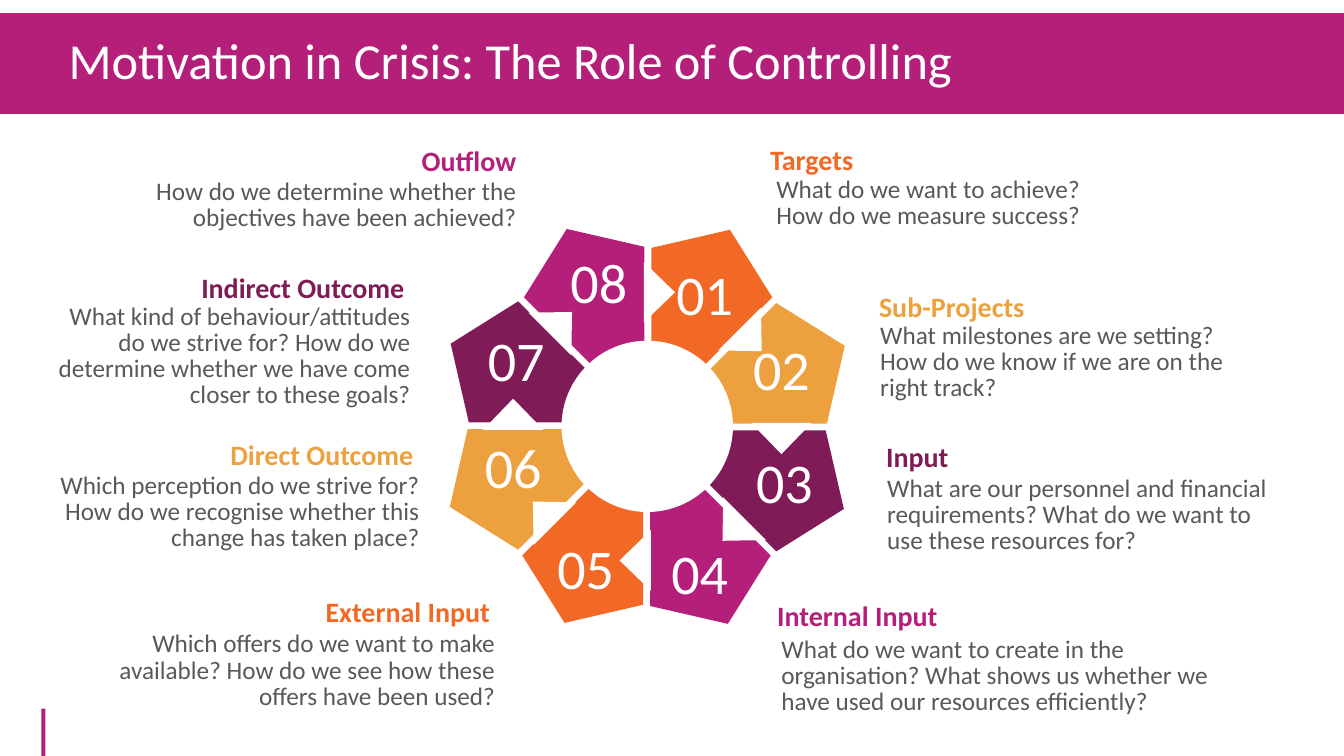
import math
from dataclasses import dataclass

import pptx
import pptx.dml.color
import pptx.enum.shapes
import pptx.enum.text
import pptx.util

Inches = pptx.util.Inches
Pt = pptx.util.Pt
ALIGN = pptx.enum.text.PP_ALIGN
ANCHOR = pptx.enum.text.MSO_ANCHOR
FIT = pptx.enum.text.MSO_AUTO_SIZE
SHAPE = pptx.enum.shapes.MSO_SHAPE


@dataclass(frozen=True)
class Theme:
    font: str = "Calibri"
    white: str = "FFFFFF"
    grey: str = "595959"
    magenta: str = "B41F7A"
    cycle: tuple = ("F16924", "EDA13E", "7F1C58", "B41F7A")
    title_size: int = 36
    number_size: int = 40
    heading_size: int = 20
    body_size: int = 18


@dataclass(frozen=True)
class Box:
    left: float
    top: float
    width: float
    height: float

    def lengths(self):
        return [Inches(value) for value in (self.left, self.top, self.width, self.height)]


@dataclass(frozen=True)
class Stage:
    heading: str
    heading_width: float
    heading_shift: tuple  # from the aligned top corner of the body box
    body: Box
    text: str
    number_offset: tuple  # from the ring centre


THEME = Theme()

# Stages 01 to 08, clockwise from the top
STAGES = [
    Stage("Targets", 1.03, (-0.12, -0.38), Box(7.66, 1.74, 3.41, 0.57),
          "What do we want to achieve? How do we measure success?", (0.57, -1.28)),
    Stage("Sub-Projects", 1.66, (-0.07, -0.38), Box(8.69, 3.19, 3.75, 0.84),
          "What milestones are we setting? How do we know if we are on the right track?",
          (1.33, -0.53)),
    Stage("Input", 0.83, (-0.07, -0.41), Box(8.76, 4.71, 3.93, 0.84),
          "What are our personnel and financial requirements? "
          "What do we want to use these resources for?", (1.36, 0.59)),
    Stage("Internal Input", 1.81, (-0.1, -0.42), Box(7.71, 6.3, 4.58, 0.84),
          "What do we want to create in the organisation? "
          "What shows us whether we have used our resources efficiently?", (0.52, 1.49)),
    Stage("External Input", 1.85, (0.01, -0.41), Box(1.09, 6.25, 3.86, 0.84),
          "Which offers do we want to make available? "
          "How do we see how these offers have been used?", (-0.61, 1.44)),
    Stage("Direct Outcome", 2.03, (0, -0.4), Box(0.06, 4.68, 4.14, 0.84),
          "Which perception do we strive for?\n"
          "How do we recognise whether this change has taken place?", (-1.33, 0.44)),
    Stage("Indirect Outcome", 2.23, (0, -0.37), Box(0.34, 3, 3.77, 1.1),
          "What kind of behaviour/attitudes do we strive for? "
          "How do we determine whether we have come closer to these goals?", (-1.3, -0.62)),
    Stage("Outflow", 1.16, (0.06, -0.39), Box(1.09, 1.76, 4.07, 0.57),
          "How do we determine whether the objectives have been achieved?", (-0.48, -1.4)),
]

# First segment and its notch, measured from the ring centre
SEGMENT = [(0.04, -1.77), (0.82, -1.95), (1.24, -1.28), (0.58, -0.62), (0.04, -0.84)]
NOTCH_CENTRE = (0.12, -1.33)
NOTCH_SIZE = (0.6, 0.31)
HUB_DIAMETER = 1.7
NUMBER_SIZE = (0.86, 0.7)


def set_values(target, values):
    for name, value in values.items():
        setattr(target, name, value)


def paint(shape, colour):
    shape.shadow.inherit = False
    shape.fill.solid()
    shape.fill.fore_color.rgb = pptx.dml.color.RGBColor.from_string(colour)
    shape.line.fill.background()


def add_filled(slide, kind, box, colour):
    shape = slide.shapes.add_shape(kind, *box.lengths())
    paint(shape, colour)
    return shape


def write(shape, text, size, colour, frame=None, paragraph_values=None, bold=False):
    shape.text_frame.text = text
    set_values(shape.text_frame, {"word_wrap": True, **(frame or {})})
    for paragraph in shape.text_frame.paragraphs:
        set_values(paragraph, {"space_before": Pt(0), **(paragraph_values or {})})
        set_values(paragraph.font, {"name": THEME.font, "size": Pt(size), "bold": bold})
        paragraph.font.color.rgb = pptx.dml.color.RGBColor.from_string(colour)


def rotate(point, degrees):
    x, y = point
    angle = math.radians(degrees)
    return (x * math.cos(angle) - y * math.sin(angle),
            x * math.sin(angle) + y * math.cos(angle))


def centred_box(centre, offset, size):
    return Box(centre[0] + offset[0] - size[0] / 2,
               centre[1] + offset[1] - size[1] / 2, *size)


def draw_title(slide, box):
    bar = add_filled(slide, SHAPE.RECTANGLE, box, THEME.magenta)
    title = slide.shapes.title
    bar.element.addnext(title.element)  # title in front of its bar
    place = Box(box.left + 0.58, box.top + 0.19, box.width - 1.22, 0.64)
    set_values(title, dict(zip(("left", "top", "width", "height"), place.lengths())))
    write(title, "Motivation in Crisis: The Role of Controlling",
          THEME.title_size, THEME.white,
          {"vertical_anchor": ANCHOR.MIDDLE, "auto_size": FIT.NONE},
          {"alignment": ALIGN.LEFT, "line_spacing": 0.8})


def draw_ring(slide, box):
    centre = (box.left + box.width / 2, box.top + box.height / 2)
    step = 360 / len(STAGES)

    # Segments
    for index in range(len(STAGES)):
        corners = [rotate(corner, index * step) for corner in SEGMENT]
        points = [(Inches(centre[0] + x), Inches(centre[1] + y)) for x, y in corners]
        builder = slide.shapes.build_freeform(*points[0])
        builder.add_line_segments(points[1:], close=True)
        paint(builder.convert_to_shape(), THEME.cycle[index % len(THEME.cycle)])

    # Hub
    hub = centred_box(centre, (0, 0), (HUB_DIAMETER, HUB_DIAMETER))
    add_filled(slide, SHAPE.OVAL, hub, THEME.white)

    # Notches
    for index in range(len(STAGES)):
        offset = rotate(NOTCH_CENTRE, index * step)
        notch = add_filled(slide, SHAPE.ISOSCELES_TRIANGLE,
                           centred_box(centre, offset, NOTCH_SIZE), THEME.white)
        notch.rotation = (90 + index * step) % 360

    # Numbers
    for number, stage in enumerate(STAGES, 1):
        place = centred_box(centre, stage.number_offset, NUMBER_SIZE)
        label = slide.shapes.add_textbox(*place.lengths())
        write(label, f"{number:02}", THEME.number_size, THEME.white,
              paragraph_values={"alignment": ALIGN.CENTER, "line_spacing": 0.9})


def draw_stage(slide, stage, box, colour, on_left):
    alignment = ALIGN.RIGHT if on_left else ALIGN.LEFT
    shift_x, shift_y = stage.heading_shift
    left = box.left + shift_x + (box.width - stage.heading_width if on_left else 0)
    place = Box(left, box.top + shift_y, stage.heading_width, 0.44)
    heading = slide.shapes.add_textbox(*place.lengths())
    write(heading, stage.heading, THEME.heading_size, colour,
          {"word_wrap": False, "vertical_anchor": ANCHOR.BOTTOM,
           "auto_size": FIT.SHAPE_TO_FIT_TEXT},
          {"alignment": alignment}, bold=True)
    body = slide.shapes.add_textbox(*box.lengths())
    write(body, stage.text, THEME.body_size, THEME.grey,
          {"margin_left": Inches(0.04), "margin_right": Inches(0.04),
           "margin_top": Inches(0.02), "margin_bottom": Inches(0.02),
           "auto_size": FIT.SHAPE_TO_FIT_TEXT},
          {"alignment": alignment, "line_spacing": Pt(18.6)})


def main():
    presentation = pptx.Presentation()
    set_values(presentation, {"slide_width": Inches(13.33), "slide_height": Inches(7.5)})
    slide = presentation.slides.add_slide(presentation.slide_layouts[5])
    # Footer accent
    add_filled(slide, SHAPE.RECTANGLE, Box(0.41, 7.03, 0.04, 0.47), THEME.magenta)
    draw_title(slide, Box(0, 0.13, 13.33, 1))
    draw_ring(slide, Box(4.46, 2.27, 3.92, 3.92))
    for index, stage in enumerate(STAGES):
        colour = THEME.cycle[index % len(THEME.cycle)]
        draw_stage(slide, stage, stage.body, colour, index >= len(STAGES) // 2)
    presentation.save("out.pptx")


if __name__ == "__main__":
    main()
